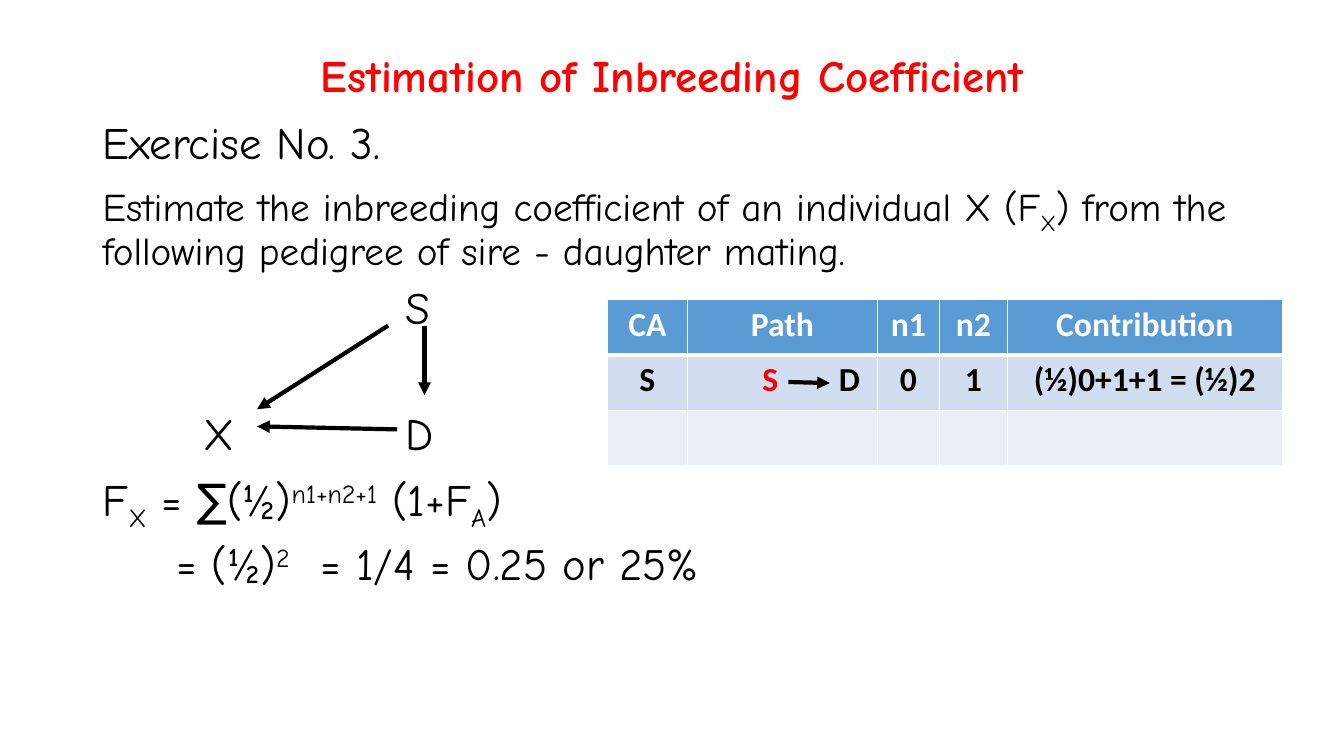
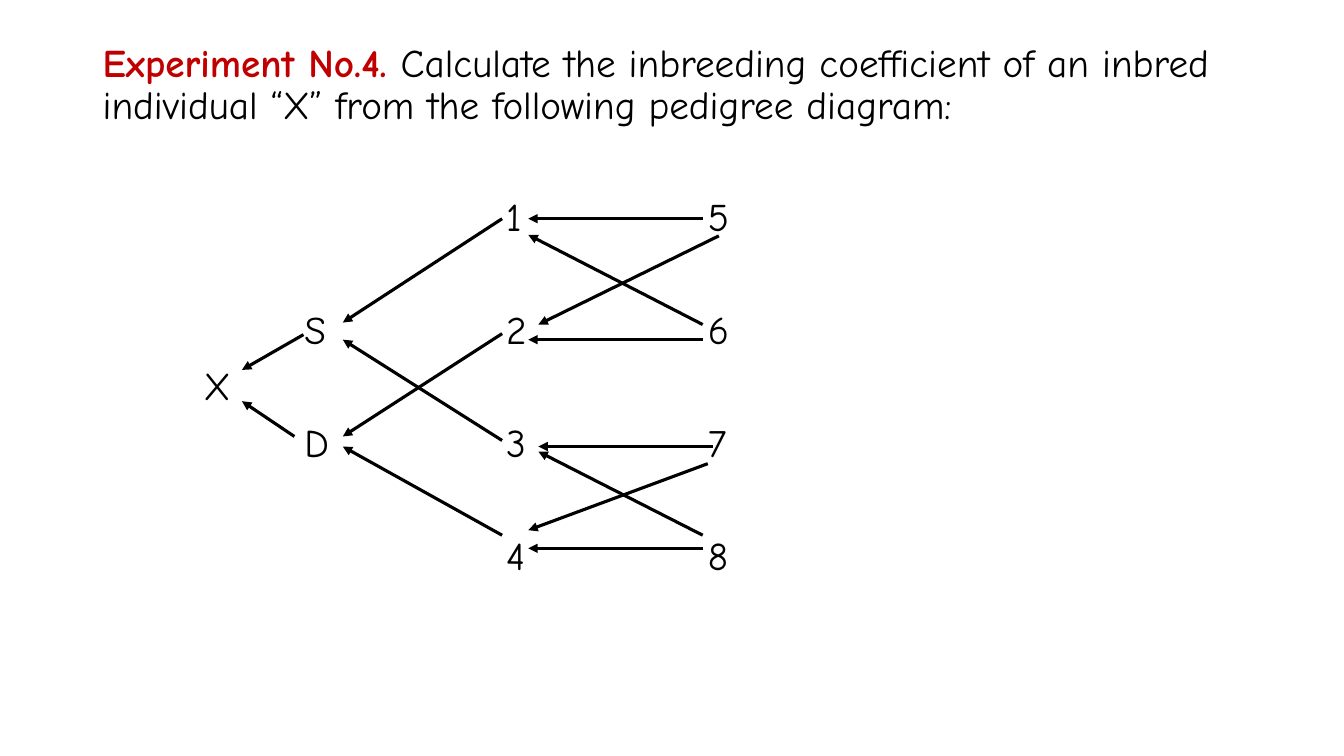
import pptx
import pptx.dml.color
import pptx.enum.shapes
import pptx.enum.text
import pptx.oxml.ns
import pptx.util
from lxml import etree

Inches = pptx.util.Inches
Pt = pptx.util.Pt
RGBColor = pptx.dml.color.RGBColor
Align = pptx.enum.text.PP_ALIGN
Anchor = pptx.enum.text.MSO_ANCHOR
qn = pptx.oxml.ns.qn

# Shared style
BLACK = RGBColor(0x00, 0x00, 0x00)
WHITE = RGBColor(0xFF, 0xFF, 0xFF)
RED = RGBColor(0xFF, 0x00, 0x00)
DARK_RED = RGBColor(0xC0, 0x00, 0x00)
HEADER_BLUE = RGBColor(0x5B, 0x9B, 0xD5)
BAND_BLUE = RGBColor(0xD2, 0xDE, 0xEF)
PALE_BLUE = RGBColor(0xEA, 0xEF, 0xF7)
BODY_FONT = "Comic Neue"
TABLE_FONT = "Calibri"
LEFT, WIDTH = 0.92, 11.5
TEXT_LEFT = LEFT + 0.1
SUB = {"baseline": -25000}
SUPER = {"baseline": 30000}


def add_span(para, text, size=28, color=BLACK, bold=False, font=BODY_FONT, baseline=0):
    span = para.add_run()
    span.text = text
    span.font.size = Pt(size)
    span.font.name = font
    span.font.bold = bold
    span.font.color.rgb = color
    if baseline:
        span._r.get_or_add_rPr().set("baseline", str(baseline))


def add_tabs(para, stops):
    tabs = etree.SubElement(para._p.get_or_add_pPr(), qn("a:tabLst"))
    for stop in stops:
        etree.SubElement(tabs, qn("a:tab"), pos=str(Inches(stop)), algn="l")


def add_borders(cell, bottom):
    properties = cell._tc.get_or_add_tcPr()
    for side, width in (("lnL", 1), ("lnR", 1), ("lnT", 1), ("lnB", bottom)):
        line = etree.SubElement(properties, qn("a:" + side), w=str(Pt(width)))
        fill = etree.SubElement(line, qn("a:solidFill"))
        etree.SubElement(fill, qn("a:srgbClr"), val=str(WHITE))


class Deck:
    def __init__(self):
        self.deck = pptx.Presentation()
        self.deck.slide_width = Inches(13.33)
        self.deck.slide_height = Inches(7.5)
        self.page = None

    def new_page(self):
        self.page = self.deck.slides.add_slide(self.deck.slide_layouts[6])

    def text(self, left, top, width, height, paras, anchor=Anchor.TOP,
             align=Align.LEFT, inset=True, tabs=()):
        """Each paragraph is a list of (text, format) pairs."""
        box = self.page.shapes.add_textbox(
            Inches(left), Inches(top), Inches(width), Inches(height))
        frame = box.text_frame
        frame.word_wrap = True
        frame.vertical_anchor = anchor
        if not inset:
            frame.margin_left = frame.margin_right = 0
            frame.margin_top = frame.margin_bottom = 0
        for index, spans in enumerate(paras):
            para = frame.add_paragraph() if index else frame.paragraphs[0]
            para.alignment = align
            para.line_spacing = 0.9
            para.space_before = Pt(10 if index else 0)
            if tabs:
                add_tabs(para, tabs)
            for text, style in spans:
                add_span(para, text, **style)

    def title(self, text):
        style = {"size": 32, "color": RED, "bold": True}
        self.text(LEFT, 0.4, WIDTH, 0.75, [[(text, style)]],
                  anchor=Anchor.MIDDLE, align=Align.CENTER)

    def label(self, text, column, middle, size=28):
        """Place a pedigree member in a one-inch column."""
        self.text(TEXT_LEFT + column, middle - 0.25, 0.4, 0.5,
                  [[(text, {"size": size})]], anchor=Anchor.MIDDLE, inset=False)

    def arrow(self, x1, y1, x2, y2, width=2.25):
        line = self.page.shapes.add_connector(
            pptx.enum.shapes.MSO_CONNECTOR.STRAIGHT,
            Inches(x1), Inches(y1), Inches(x2), Inches(y2))
        line.line.color.rgb = BLACK
        line.line.width = Pt(width)
        etree.SubElement(line.line._get_or_add_ln(), qn("a:tailEnd"), type="triangle")
        etree.SubElement(line._element.spPr, qn("a:effectLst"))

    def table(self, left, top, widths, row_height, rows, fills, tabs):
        """A cell is a list of (text, colour) pairs; tabs apply to tabbed cells."""
        table = self.page.shapes.add_table(
            len(rows), len(widths), Inches(left), Inches(top),
            Inches(sum(widths)), Inches(row_height * len(rows))).table
        for column, width in zip(table.columns, widths):
            column.width = Inches(width)
        for r, (row, fill) in enumerate(zip(rows, fills)):
            table.rows[r].height = Inches(row_height)
            for c, spans in enumerate(row):
                cell = table.cell(r, c)
                add_borders(cell, 1 if r else 3)
                cell.fill.solid()
                cell.fill.fore_color.rgb = fill
                para = cell.text_frame.paragraphs[0]
                tabbed = any("\t" in text for text, color in spans)
                para.alignment = Align.LEFT if tabbed else Align.CENTER
                if tabbed:
                    add_tabs(para, tabs)
                for text, color in spans:
                    add_span(para, text, size=24, color=color, bold=True, font=TABLE_FONT)


def build_exercise(deck):
    deck.new_page()
    deck.title("Estimation of Inbreeding Coefficient")
    big = {"size": 32}
    deck.text(LEFT, 1.15, WIDTH, 1.7, [
        [("Exercise No. 3.", big)],
        [("Estimate the inbreeding coefficient of an individual X (F", {}), ("X", SUB),
         (") from the following pedigree of sire - daughter mating.", {})],
    ])

    # Sire - daughter pedigree
    for name, column, middle in (("S", 3, 3.08), ("X", 1, 4.33), ("D", 3, 4.33)):
        deck.label(name, column, middle, size=32)
    for ends in ((4.21, 3.23, 4.21, 3.92), (3.85, 3.23, 2.55, 4.06),
                 (3.94, 4.26, 2.55, 4.23)):
        deck.arrow(*ends, width=3)

    # Paths through the common ancestor
    headings = ["CA", "Path", "n1", "n2", "Contribution"]
    values = ["S", None, "0", "1", "(½)0+1+1 = (½)2"]
    route = [("\tS", RED), ("\tD", BLACK)]
    deck.table(6.02, 2.97, [0.8, 1.88, 0.62, 0.67, 2.73], 0.55, [
        [[(heading, WHITE)] for heading in headings],
        [[(value, BLACK)] if value else route for value in values],
        [[] for heading in headings],
    ], [HEADER_BLUE, BAND_BLUE, PALE_BLUE], tabs=(0.64, 1.4))
    deck.arrow(7.82, 3.79, 8.23, 3.8, width=3)

    # Formula and result
    sub, power = {**big, **SUB}, {**big, **SUPER}
    deck.text(LEFT, 4.64, WIDTH, 1.4, [
        [("F", big), ("X", sub), (" = ∑(½)", big), ("n1+n2+1", power),
         (" (1+F", big), ("A", sub), (")", big)],
        [("\t= (½)", big), ("2", power), ("\t= 1/4 = 0.25 or 25%", big)],
    ], tabs=(0.73, 2.16))


def build_experiment(deck):
    deck.new_page()
    deck.text(LEFT, 0.38, WIDTH, 1.1, [[
        ("Experiment No.4. ", {"color": DARK_RED, "bold": True}),
        ("Calculate the inbreeding coefficient of an inbred individual “X” "
         "from the following pedigree diagram:", {}),
    ]])

    # Pedigree members: name, column, row
    members = (("X", 1, 3), ("S", 2, 2), ("D", 2, 4),
               ("1", 4, 0), ("2", 4, 2), ("3", 4, 4), ("4", 4, 6),
               ("5", 6, 0), ("6", 6, 2), ("7", 6, 4), ("8", 6, 6))
    for name, column, row in members:
        deck.label(name, column, 2.17 + 0.56 * row)

    # Grandparents to parents
    for start, end in ((2.17, 3.2), (3.31, 4.33), (4.37, 3.37), (5.31, 4.43)):
        deck.arrow(4.98, start, 3.4, end)

    # Great-grandparents to grandparents, then parents to X
    for ends in ((6.97, 2.17, 5.24, 2.17), (6.97, 3.22, 5.24, 2.33),
                 (7.02, 4.6, 5.24, 5.26), (6.97, 5.31, 5.34, 4.48),
                 (6.97, 3.37, 5.24, 3.37), (7.07, 4.43, 5.34, 4.43),
                 (6.97, 5.44, 5.24, 5.44), (7.13, 2.34, 5.34, 3.22),
                 (3.01, 3.32, 2.4, 3.67), (2.92, 4.33, 2.4, 3.98)):
        deck.arrow(*ends)


def main():
    deck = Deck()
    build_exercise(deck)
    build_experiment(deck)
    deck.deck.save("out.pptx")


if __name__ == "__main__":
    main()
